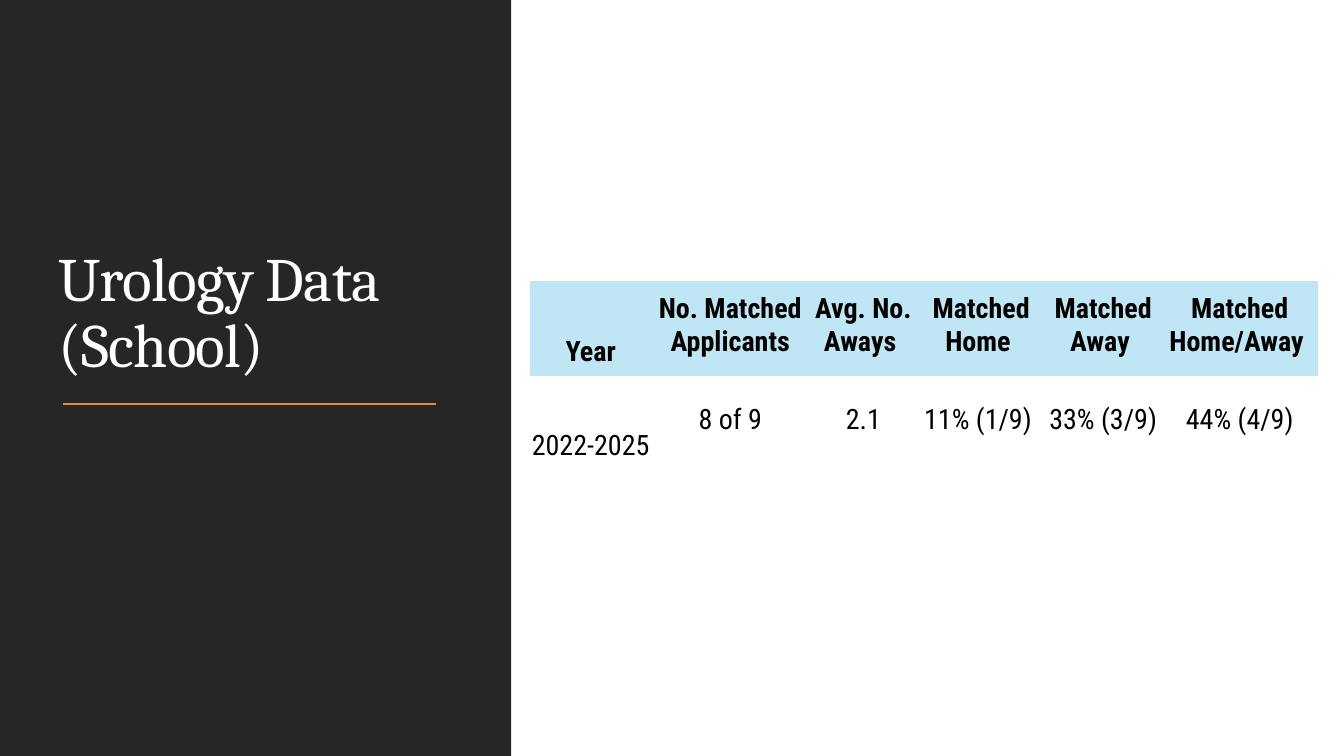
from dataclasses import dataclass

from pptx import Presentation
from pptx.dml.color import RGBColor
from pptx.enum.shapes import MSO_CONNECTOR, MSO_SHAPE
from pptx.enum.text import MSO_ANCHOR, PP_ALIGN
from pptx.oxml.ns import qn
from pptx.oxml.xmlchemy import OxmlElement
from pptx.slide import Slide
from pptx.table import _Cell
from pptx.text.text import TextFrame
from pptx.util import Inches, Pt

GRID_COLUMNS, GRID_ROWS = 160, 90
SLIDE_WIDTH, SLIDE_HEIGHT = Inches(13.33), Inches(7.5)
CHARCOAL, WHITE, BLACK = "262626", "FFFFFF", "000000"
ORANGE, PALE_BLUE = "E88B33", "C0E6F5"
PLAIN_TABLE_STYLE = "{2D5ABB26-0587-4C30-8999-92F81FD0307C}"
MATCH_ROW_HEIGHT = 11.28
CELL_FORMAT = {
    "margin_left": Inches(0.01),
    "margin_right": Inches(0.01),
    "margin_top": Inches(0.01),
    "margin_bottom": Inches(0.08),
}


@dataclass(frozen=True)
class Area:
    column: float
    row: float
    columns: float
    rows: float

    def place(self) -> tuple[int, int, int, int]:
        return across(self.column), down(self.row), across(self.columns), down(self.rows)


@dataclass(frozen=True)
class Measure:
    heading: str
    result: str
    columns: float
    anchor: MSO_ANCHOR = MSO_ANCHOR.MIDDLE


MEASURES = [
    Measure("Year", "2022-2025", 14.4, MSO_ANCHOR.BOTTOM),
    Measure("No. Matched Applicants", "8 of 9", 18.84),
    Measure("Avg. No. Aways ", "2.1", 12.84),
    Measure("Matched Home ", "11% (1/9) ", 15.24),
    Measure("Matched Away ", "33% (3/9) ", 13.8),
    Measure("Matched Home/Away ", "44% (4/9)", 18.72),
]


def across(columns: float) -> int:
    return round(SLIDE_WIDTH * columns / GRID_COLUMNS)


def down(rows: float) -> int:
    return round(SLIDE_HEIGHT * rows / GRID_ROWS)


def colour(value: str) -> RGBColor:
    return RGBColor.from_string(value)


def write(frame: TextFrame, text: str, hex_colour: str, **font_format) -> None:
    run = frame.paragraphs[0].add_run()
    run.text = text
    run.font.color.rgb = colour(hex_colour)
    for attribute, value in font_format.items():
        setattr(run.font, attribute, value)


def draw_panel(slide: Slide, area: Area) -> None:
    panel = slide.shapes.add_shape(MSO_SHAPE.RECTANGLE, *area.place())
    panel.shadow.inherit = False
    panel.fill.solid()
    panel.fill.fore_color.rgb = colour(CHARCOAL)
    panel.line.fill.background()


def draw_title(slide: Slide, area: Area) -> None:
    title = slide.shapes.add_textbox(*area.place()).text_frame
    title.word_wrap = True
    title.vertical_anchor = MSO_ANCHOR.BOTTOM
    title.paragraphs[0].line_spacing = 0.9
    write(title, "Urology Data (School)", WHITE, name="Cambria", size=Pt(44))
    title.paragraphs[0].runs[0].font._element.set("spc", "-50")


def draw_rule(slide: Slide, area: Area) -> None:
    left, top, width, height = area.place()
    rule = slide.shapes.add_connector(
        MSO_CONNECTOR.STRAIGHT, left, top, left + width, top + height
    )
    rule.line.color.rgb = colour(ORANGE)
    rule.line.width = Pt(1.5)
    rule.element.spPr.append(OxmlElement("a:effectLst"))


def fill_cell(cell: _Cell, text: str, anchor: MSO_ANCHOR, heading: bool) -> None:
    for attribute, value in CELL_FORMAT.items():
        setattr(cell, attribute, value)
    cell.vertical_anchor = anchor
    if heading:
        cell.fill.solid()
        cell.fill.fore_color.rgb = colour(PALE_BLUE)
    else:
        cell.fill.background()
    cell.text_frame.paragraphs[0].alignment = PP_ALIGN.CENTER
    write(cell.text_frame, text, BLACK, name="Roboto Condensed", size=Pt(20), bold=heading)


def draw_match_results(slide: Slide, column: float, row: float) -> None:
    area = Area(column, row, sum(m.columns for m in MEASURES), 2 * MATCH_ROW_HEIGHT)
    frame = slide.shapes.add_table(2, len(MEASURES), *area.place())
    for style in frame.element.iter(qn("a:tableStyleId")):
        style.text = PLAIN_TABLE_STYLE
    results = frame.table
    results.first_row = results.horz_banding = False
    for table_row in results.rows:
        table_row.height = down(MATCH_ROW_HEIGHT)
    for index, measure in enumerate(MEASURES):
        results.columns[index].width = across(measure.columns)
        fill_cell(results.cell(0, index), measure.heading, measure.anchor, True)
        fill_cell(results.cell(1, index), measure.result, measure.anchor, False)


def main() -> None:
    presentation = Presentation()
    presentation.slide_width, presentation.slide_height = SLIDE_WIDTH, SLIDE_HEIGHT
    slide = presentation.slides.add_slide(presentation.slide_layouts[6])
    draw_panel(slide, Area(0, 0, 60.84, GRID_ROWS))
    draw_title(slide, Area(5.76, 8.4, 48, 37.56))
    draw_rule(slide, Area(7.56, 48.12, 44.4, 0))
    draw_match_results(slide, 63.12, 33.48)
    presentation.save("out.pptx")


if __name__ == "__main__":
    main()
